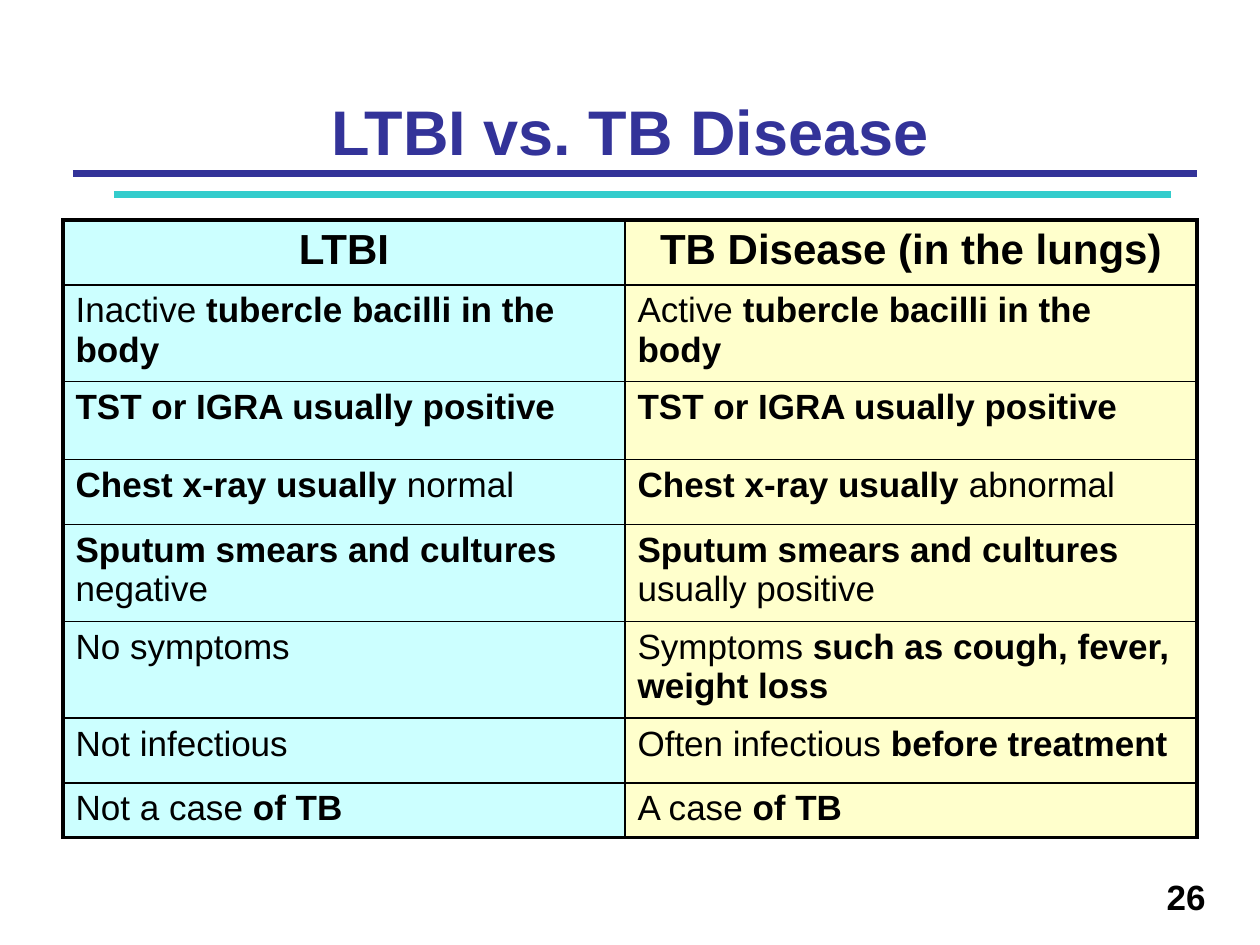
import pptx
import pptx.util
import pptx.dml.color
import pptx.enum.shapes
import pptx.enum.text
import pptx.oxml.ns
import lxml.etree

RGB = pptx.dml.color.RGBColor
NAVY = RGB(0x33, 0x33, 0x99)
TEAL = RGB(0x33, 0xCC, 0xCC)
BLACK = RGB(0x00, 0x00, 0x00)
BLUE = RGB(0xCC, 0xFF, 0xFF)
CREAM = RGB(0xFF, 0xFF, 0xCC)
ALIGN = pptx.enum.text.PP_ALIGN
ANCHOR = pptx.enum.text.MSO_ANCHOR
SCALE = 914400 / 126
qn = pptx.oxml.ns.qn


def px(*vals):
    return [pptx.util.Emu(round(v * SCALE)) for v in vals]


def write(para, text, size, color, align):
    """Fill a paragraph; text between asterisks is bold."""
    para.alignment = align
    for i, part in enumerate(text.split("*")):
        if part:
            run = para.add_run()
            run.text = part
            look = {"name": "Arial", "size": pptx.util.Pt(size), "bold": i % 2 == 1}
            for key, val in look.items():
                setattr(run.font, key, val)
            run.font.color.rgb = color


deck = pptx.Presentation()
deck.slide_width, deck.slide_height = px(1260, 945)
slide = deck.slides.add_slide(deck.slide_layouts[6])

# Rules under the title
for left, right, y, color in [(73, 1197, 174, NAVY), (114, 1171, 195, TEAL)]:
    rule = slide.shapes.add_connector(
        pptx.enum.shapes.MSO_CONNECTOR.STRAIGHT, *px(left, y, right, y))
    rule.line.color.rgb = color
    rule.line.width = pptx.util.Pt(4)
    lxml.etree.SubElement(rule._element.spPr, qn("a:effectLst"))

# Title and page number
for box, text, size, color, align, anchor in [
    ((63, 16, 1134, 158), "*LTBI vs. TB Disease*", 36, NAVY, ALIGN.CENTER, ANCHOR.BOTTOM),
    ((504, 869, 714, 66), "*26*", 20, BLACK, ALIGN.RIGHT, ANCHOR.TOP),
]:
    frame = slide.shapes.add_textbox(*px(*box)).text_frame
    frame.word_wrap = True
    frame.vertical_anchor = anchor
    write(frame.paragraphs[0], text, size, color, align)

# Comparison table: row height, LTBI, TB disease
ROWS = [
    (65, "*LTBI*", "*TB Disease (in the lungs)*"),
    (91, "Inactive* tubercle bacilli in the body*", "Active *tubercle bacilli in the body*"),
    (78, "*TST or IGRA usually positive*", "*TST or IGRA usually positive*"),
    (65, "*Chest x-ray usually *normal", "*Chest x-ray usually *abnormal"),
    (91, "*Sputum smears and cultures *negative",
     "*Sputum smears and cultures *usually positive"),
    (91, "No symptoms", "Symptoms *such as cough, fever, weight loss*"),
    (65, "Not infectious", "Often infectious* before treatment*"),
    (52, "Not a case* of TB*", "A case* of TB*"),
]
COLS = [(562, BLUE), (572, CREAM)]
high = sum(row[0] for row in ROWS)
table = slide.shapes.add_table(len(ROWS), 2, *px(63, 220, 1134, high)).table
table.first_row = table.horz_banding = False
for c, (width, fill) in enumerate(COLS):
    table.columns[c].width = px(width)[0]

for r, (height, *texts) in enumerate(ROWS):
    table.rows[r].height = px(height)[0]
    for c, text in enumerate(texts):
        cell = table.cell(r, c)
        head = r == 0
        write(cell.text_frame.paragraphs[0], text, 24 if head else 20, BLACK,
              ALIGN.CENTER if head else ALIGN.LEFT)
        # Outer edges are heavy, inner ones thin
        outer = {"L": c == 0, "R": c == 1, "T": head, "B": r == len(ROWS) - 1}
        props = cell._tc.get_or_add_tcPr()
        for side, heavy in outer.items():
            edge = lxml.etree.SubElement(
                props, qn("a:ln" + side), w=str(pptx.util.Pt(2.25 if heavy else 1)))
            paint = lxml.etree.SubElement(edge, qn("a:solidFill"))
            lxml.etree.SubElement(paint, qn("a:srgbClr"), val=str(BLACK))
        cell.fill.solid()
        cell.fill.fore_color.rgb = COLS[c][1]

deck.save("out.pptx")
